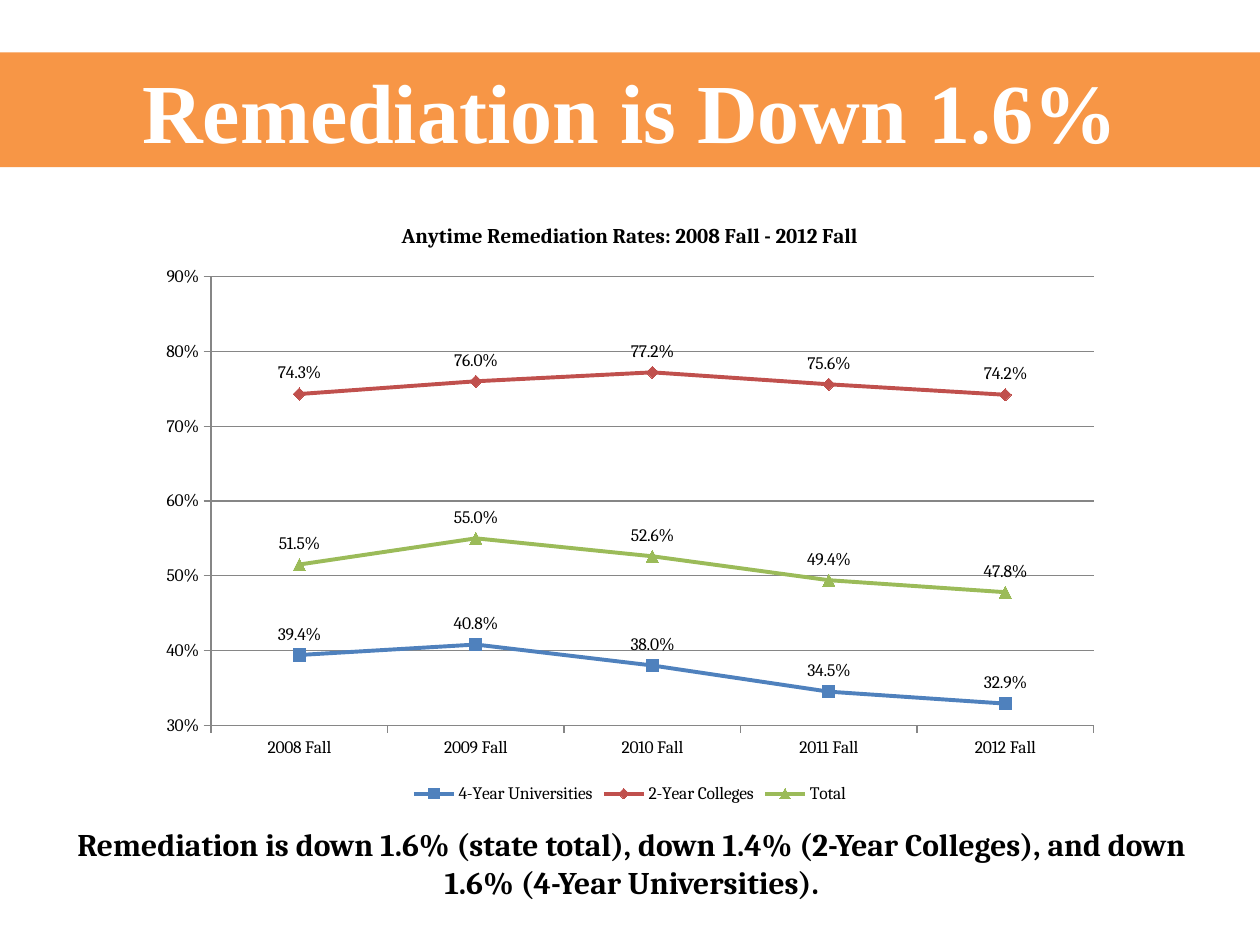
from pptx import Presentation
from pptx.chart.data import CategoryChartData
from pptx.dml.color import RGBColor
from pptx.enum.chart import (
    XL_CHART_TYPE as ChartType,
    XL_LABEL_POSITION as LabelPosition,
    XL_LEGEND_POSITION as LegendPosition,
    XL_MARKER_STYLE as Marker,
    XL_TICK_MARK as TickMark,
)
from pptx.enum.shapes import MSO_SHAPE as Shape
from pptx.enum.text import MSO_ANCHOR as Anchor, PP_ALIGN as Align
from pptx.util import Pt

HEADLINE = "Remediation is Down 1.6%"
SUMMARY = (
    "Remediation is down 1.6% (state total), down 1.4% (2-Year Colleges), "
    "and down 1.6% (4-Year Universities)."
)
CHART_TITLE = "Anytime Remediation Rates: 2008 Fall - 2012 Fall"
TERMS = [f"{year} Fall" for year in range(2008, 2013)]
RATES = [
    ("4-Year Universities", (0.394, 0.408, 0.38, 0.345, 0.329), "4F81BD", Marker.SQUARE),
    ("2-Year Colleges", (0.743, 0.76, 0.772, 0.756, 0.742), "C0504D", Marker.DIAMOND),
    ("Total", (0.515, 0.55, 0.526, 0.494, 0.478), "9BBB59", Marker.TRIANGLE),
]
THEME = {
    "banner": "F79646", "light": "FFFFFF", "dark": "000000", "rule": "868686",
    "headline_font": "Times New Roman", "body_font": "Cambria",
    "headline": 48, "summary": 18, "chart_title": 12, "chart": 10,
}
SLIDE_SIZE = (720, 540)
BANNER_BOX = (0, 30, 720, 65.5)
CHART_BOX = (84, 114, 552, 348)
SUMMARY_BOX = (31, 468, 660, 51)


def points(values):
    return [Pt(value) for value in values]


def color(key):
    return RGBColor.from_string(THEME.get(key, key))


def paint(fill, key):
    fill.solid()
    fill.fore_color.rgb = color(key)


def set_font(font, family, size, ink, bold=False):
    font.name = THEME[family]
    font.size = Pt(THEME[size])
    font.color.rgb = color(ink)
    font.bold = bold


def write(frame, text, family, size, ink):
    frame.word_wrap = True
    paragraph = frame.paragraphs[0]
    paragraph.text = text
    paragraph.alignment = Align.CENTER
    set_font(paragraph.font, family, size, ink, bold=True)


def rule(line):
    line.color.rgb = color("rule")
    line.width = Pt(0.75)


def add_banner(slide):
    banner = slide.shapes.add_shape(Shape.RECTANGLE, *points(BANNER_BOX))
    banner.shadow.inherit = False
    paint(banner.fill, "banner")
    banner.line.fill.background()
    banner.text_frame.vertical_anchor = Anchor.MIDDLE
    write(banner.text_frame, HEADLINE, "headline_font", "headline", "light")


def add_rates(slide):
    data = CategoryChartData(number_format="0.0%")
    data.categories = TERMS
    for name, values, _, _ in RATES:
        data.add_series(name, values)
    chart = slide.shapes.add_chart(ChartType.LINE_MARKERS, *points(CHART_BOX), data).chart
    set_font(chart.font, "body_font", "chart", "dark")
    chart.has_title = True
    write(chart.chart_title.text_frame, CHART_TITLE, "body_font", "chart_title", "dark")
    chart.chart_title.include_in_layout = False
    chart.has_legend = True
    chart.legend.position = LegendPosition.BOTTOM
    chart.legend.include_in_layout = False

    scale = chart.value_axis
    scale.minimum_scale, scale.maximum_scale, scale.major_unit = 0.3, 0.9, 0.1
    scale.tick_labels.number_format = "0%"
    scale.tick_labels.number_format_is_linked = False
    scale.has_major_gridlines = True
    rule(scale.major_gridlines.format.line)
    for axis in (scale, chart.category_axis):
        axis.major_tick_mark = TickMark.OUTSIDE
        axis.minor_tick_mark = TickMark.NONE
        rule(axis.format.line)

    for series, (_, _, hue, marker) in zip(chart.plots[0].series, RATES):
        series.smooth = False
        series.format.line.color.rgb = color(hue)
        series.format.line.width = Pt(2.25)
        series.marker.style = marker
        series.marker.size = 7
        paint(series.marker.format.fill, hue)
        series.marker.format.line.color.rgb = color(hue)
        labels = series.data_labels
        labels.show_value = True
        labels.position = LabelPosition.ABOVE
        labels.number_format = "0.0%"
        labels.number_format_is_linked = False
        set_font(labels.font, "body_font", "chart", "dark")


def add_summary(slide):
    summary = slide.shapes.add_textbox(*points(SUMMARY_BOX))
    write(summary.text_frame, SUMMARY, "body_font", "summary", "dark")


def main():
    deck = Presentation()
    deck.slide_width, deck.slide_height = points(SLIDE_SIZE)
    slide = deck.slides.add_slide(deck.slide_layouts[6])
    add_banner(slide)
    add_rates(slide)
    add_summary(slide)
    deck.save("out.pptx")


if __name__ == "__main__":
    main()
